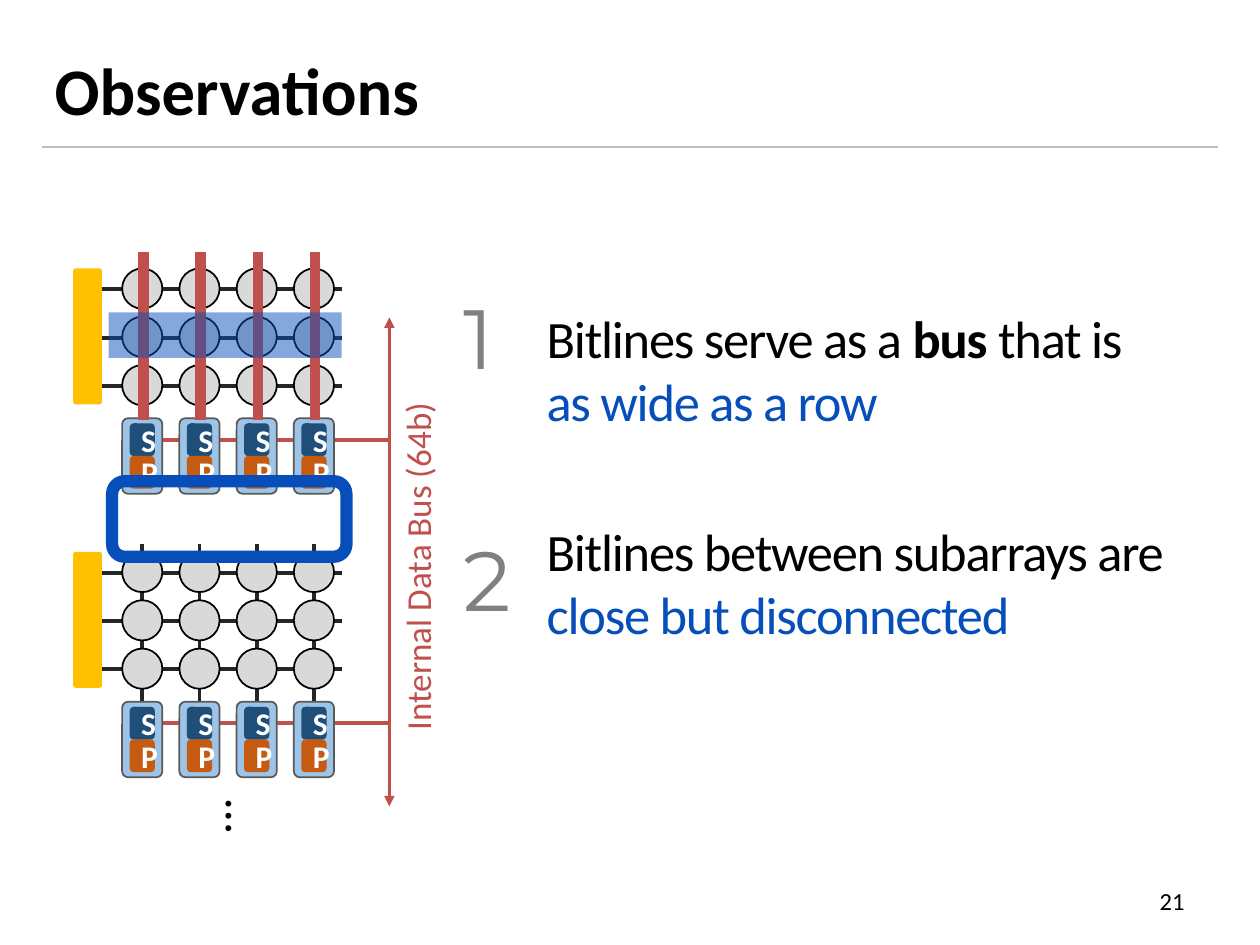
from lxml import etree
from pptx import Presentation
from pptx.dml.color import RGBColor
from pptx.enum.shapes import MSO_CONNECTOR, MSO_SHAPE as Preset
from pptx.enum.text import MSO_ANCHOR as Anchor, MSO_AUTO_SIZE as AutoSize, PP_ALIGN as Align
from pptx.oxml.ns import qn
from pptx.util import Pt

BLACK, WHITE, GRAY, DARK = "000000", "FFFFFF", "808080", "262626"
RED, BLUE = "C0504D", "064FBA"
COLUMNS, ROWS = 4, 3
COLUMN_PITCH, ROW_PITCH = 32.7, 27.6
CELL = 23


def rgb(value):
    return RGBColor.from_string(value)


def add_line(page, start, end, color, width, arrows=False):
    line = page.shapes.add_connector(
        MSO_CONNECTOR.STRAIGHT, *(Pt(value) for value in (*start, *end)))
    line.line.color.rgb = rgb(color)
    line.line.width = Pt(width)
    if arrows:
        outline = line.line._get_or_add_ln()
        for end_name in ("headEnd", "tailEnd"):
            etree.SubElement(outline, qn(f"a:{end_name}"), type="triangle")
    etree.SubElement(line._element.spPr, qn("a:effectLst"))


def add_block(page, preset, box, fill=None, line=None, width=1, radius=None):
    block = page.shapes.add_shape(preset, *(Pt(value) for value in box))
    block.shadow.inherit = False
    if fill:
        block.fill.solid()
        block.fill.fore_color.rgb = rgb(fill)
    else:
        block.fill.background()
    if line:
        block.line.color.rgb = rgb(line)
        block.line.width = Pt(width)
    else:
        block.line.fill.background()
    if radius is not None:
        block.adjustments[0] = radius
    return block


def style(para, size, color, name="Calibri", bold=False, align=Align.LEFT):
    para.alignment = align
    para.font.size = Pt(size)
    para.font.name = name
    para.font.bold = bold
    para.font.color.rgb = rgb(color)


def add_text(page, box, text, size, color, name="Calibri", align=Align.LEFT,
             wrap=False, rotation=0):
    label = page.shapes.add_textbox(*(Pt(value) for value in box))
    label.rotation = rotation
    frame = label.text_frame
    frame.word_wrap = wrap
    frame.auto_size = AutoSize.SHAPE_TO_FIT_TEXT
    para = frame.paragraphs[0]
    para.text = text
    style(para, size, color, name, align=align)
    return label


def add_header(page, box):
    left, top, width, height = box
    title = page.shapes.title
    title.left, title.top, title.width, title.height = (Pt(value) for value in box)
    frame = title.text_frame
    frame.text = "Observations"
    frame.vertical_anchor = Anchor.MIDDLE
    frame.auto_size = AutoSize.NONE
    style(frame.paragraphs[0], 38, BLACK, bold=True)
    rule = top + height - 12
    add_line(page, (left, rule), (left + width, rule), "BFBFBF", 1.5)


def add_sense_amplifier(page, left, top):
    add_block(page, Preset.ROUNDED_RECTANGLE, (left, top, CELL, 43.2),
              "9DC3E6", "595959", radius=0.15)
    for index, (letter, color) in enumerate((("S", "1F4E79"), ("P", "C55A11"))):
        part = add_block(page, Preset.ROUNDED_RECTANGLE,
                         (left + 4.3, top + 2.9 + 18.7 * index, 14.4, 18.7), color)
        part.text_frame.vertical_anchor = Anchor.MIDDLE
        para = part.text_frame.paragraphs[0]
        para.text = letter
        style(para, 18, WHITE, bold=True, align=Align.CENTER)


def add_subarray(page, left, top):
    first_cell = left + 28
    for column in range(COLUMNS):
        x = first_cell + CELL / 2 + column * COLUMN_PITCH
        add_line(page, (x, top), (x, top + 90), DARK, 2.25)
    add_block(page, Preset.ROUNDED_RECTANGLE, (left, top + 4.3, 16.5, 77.8),
              "FFC000", radius=0.1)
    for row in range(ROWS):
        y = top + 16.3 + row * ROW_PITCH
        add_line(page, (left + 16.5, y), (left + 153.4, y), DARK, 2.25)
    for column in range(COLUMNS):
        x = first_cell + column * COLUMN_PITCH
        add_sense_amplifier(page, x, top + 90)
        for row in range(ROWS):
            add_block(page, Preset.OVAL,
                      (x, top + 4.4 + row * ROW_PITCH, CELL, CELL), "D9D9D9", BLACK)


def add_memory_bank(page, left, top):
    pitch, bus = 162, left + 180.7
    for index in (1, 0):
        y = top + 102.3 + index * pitch
        add_line(page, (bus, y), (left + 31.7, y), RED, 2)
    add_line(page, (bus, top + 311.8), (bus, top + 32.4), RED, 2, arrows=True)
    for index in range(2):
        add_subarray(page, left, top + index * pitch)
    add_text(page, (left + 77, top + 301.7, 42.5, 41), "…", 28, BLACK, rotation=90)


def add_highlights(page, left, top):
    for column in range(COLUMNS):
        x = left + 40.2 + column * COLUMN_PITCH
        add_line(page, (x, top - 5), (x, top + 91), RED, 6)
    row = add_block(page, Preset.RECTANGLE, (left + 20.3, top + 29.5, 133.2, 26), BLUE)
    color = row.fill._xPr.find(qn("a:solidFill"))[0]
    etree.SubElement(color, qn("a:alpha"), val="49000")


def add_observation(page, box, number, number_top, spans):
    left, top, width, height = box
    label = add_text(page, box, "", 30, BLACK, wrap=True)
    para = label.text_frame.paragraphs[0]
    for text, color, bold in spans:
        span = para.add_run()
        span.text = text
        span.font.color.rgb = rgb(color)
        span.font.bold = bold
        span._r.get_or_add_rPr().set("spc", "-70")
        if text.endswith("that is "):
            para.add_line_break()
    add_text(page, (left - 47.5, number_top, 46.8, 65.5), number, 48, GRAY, "Montserrat")


def main():
    deck = Presentation()
    deck.slide_width, deck.slide_height = Pt(720), Pt(540)
    page = deck.slides.add_slide(deck.slide_layouts[5])
    add_header(page, (24, 6, 672, 90))
    number = add_text(page, (516, 500.4, 168, 28.8), "21", 14, BLACK,
                      align=Align.RIGHT, wrap=True)
    number.text_frame.auto_size = AutoSize.NONE
    number.text_frame.vertical_anchor = Anchor.MIDDLE
    add_memory_bank(page, 41.8, 149)
    add_highlights(page, 41.8, 149)
    add_observation(page, (305.3, 171.4, 385.2, 80), "1", 159.8, (
        ("Bitlines serve as a ", BLACK, False), ("bus ", BLACK, True),
        ("that is ", BLACK, False), ("as wide as a row", BLUE, False)))
    add_observation(page, (305.3, 293, 414.7, 80), "2", 298, (
        ("Bitlines between subarrays are", BLACK, False),
        (" close but disconnected", BLUE, False)))
    add_block(page, Preset.ROUNDED_RECTANGLE, (64.1, 275, 133.9, 43.2), line=BLUE, width=7)
    add_text(page, (136, 306, 205.2, 31.7), "Internal Data Bus (64b)", 20, RED, rotation=270)
    deck.save("out.pptx")


if __name__ == "__main__":
    main()
